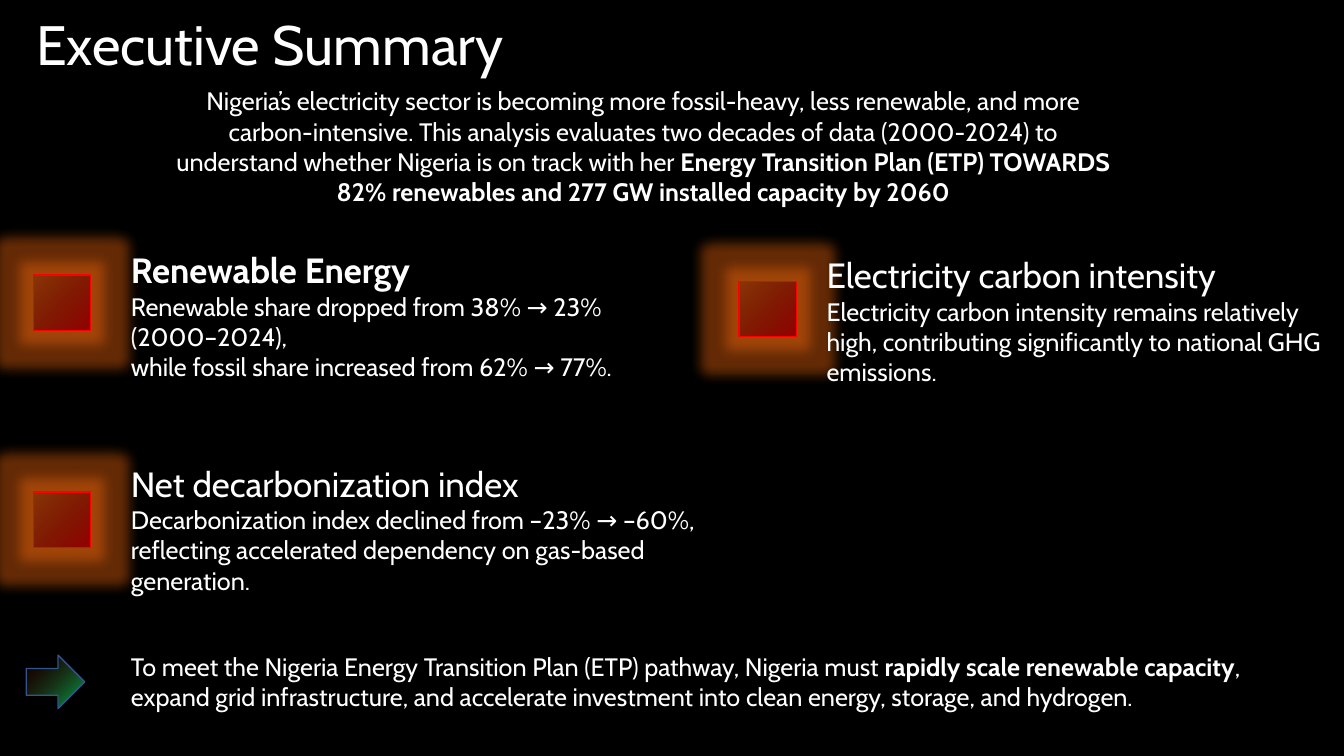
from dataclasses import dataclass

from lxml import etree
from pptx import Presentation
from pptx.dml.color import RGBColor
from pptx.enum.shapes import MSO_SHAPE
from pptx.enum.text import MSO_ANCHOR, PP_ALIGN
from pptx.oxml import parse_xml
from pptx.oxml.ns import nsdecls, qn
from pptx.slide import Slide
from pptx.util import Inches, Pt

COLORS = {
    "background": "000000",
    "text": "FFFFFF",
    "red": "FF0000",
    "dark_red": "970000",
    "fade": "470000",
    "green": "00B050",
    "arrow_line": "325491",
    "glow": "FF6D0F",
}
FONT = "Cabin"
HEADING_SIZE = 25
BODY_SIZE = 18

Box = tuple[float, float, float, float]
Run = tuple[str, bool]  # text, bold


@dataclass(frozen=True)
class Line:
    runs: list[Run]
    size: float = BODY_SIZE


@dataclass(frozen=True)
class Stop:
    position: int
    color: str
    opacity: int = 100


@dataclass(frozen=True)
class Finding:
    heading: str
    body: list[str]
    text_box: Box
    marker: tuple[float, float]
    bold_heading: bool = False


MARKER_STOPS = [Stop(0, "dark_red"), Stop(97, "fade", 23), Stop(100, "red")]
ARROW_STOPS = [Stop(0, "green"), Stop(96, "fade", 23)]

FINDINGS = [
    Finding(
        "Renewable Energy",
        [
            "Renewable share dropped from 38% → 23%",
            "(2000–2024),",
            "while fossil share increased from 62% → 77%.",
        ],
        (1.2, 2.42, 5.94, 1.73),
        (0.33, 2.73),
        bold_heading=True,
    ),
    Finding(
        "Electricity carbon intensity",
        ["Electricity carbon intensity remains relatively high, contributing "
         "significantly to national GHG emissions."],
        (8.1, 2.47, 5.17, 1.73),
        (7.33, 2.79),
    ),
    Finding(
        "Net decarbonization index",
        ["Decarbonization index declined from –23% → –60%, reflecting "
         "accelerated dependency on gas-based generation."],
        (1.2, 4.54, 6.14, 1.43),
        (0.33, 4.88),
    ),
]


def add_text(slide: Slide, lines: list[Line], box: Box, *,
             align: PP_ALIGN = PP_ALIGN.LEFT,
             anchor: MSO_ANCHOR = MSO_ANCHOR.TOP,
             line_spacing: float = 1.0) -> None:
    frame = slide.shapes.add_textbox(*map(Inches, box)).text_frame
    frame.word_wrap = True
    frame.vertical_anchor = anchor
    for index, line in enumerate(lines):
        paragraph = frame.add_paragraph() if index else frame.paragraphs[0]
        paragraph.alignment = align
        paragraph.line_spacing = line_spacing
        for text, bold in line.runs:
            run = paragraph.add_run()
            run.text = text
            run.font.name = FONT
            run.font.size = Pt(line.size)
            run.font.bold = bold
            run.font.color.rgb = RGBColor.from_string(COLORS["text"])


def gradient_xml(stops: list[Stop], angle: int) -> str:
    stop_xml = "".join(
        f'<a:gs pos="{stop.position * 1000}"><a:srgbClr val="{COLORS[stop.color]}">'
        f'<a:alpha val="{stop.opacity * 1000}"/></a:srgbClr></a:gs>'
        for stop in stops
    )
    return (f'<a:gradFill {nsdecls("a")} rotWithShape="1"><a:gsLst>{stop_xml}</a:gsLst>'
            f'<a:lin ang="{angle * 60000}" scaled="0"/></a:gradFill>')


def add_gradient_shape(slide: Slide, kind: MSO_SHAPE, box: Box,
                       stops: list[Stop], line_color: str,
                       glow_radius: float = 0) -> None:
    shape = slide.shapes.add_shape(kind, *map(Inches, box))
    shape.shadow.inherit = False
    shape.line.color.rgb = RGBColor.from_string(COLORS[line_color])
    shape.line.width = Pt(1)
    properties = shape._element.spPr
    properties.find(qn("a:prstGeom")).addnext(parse_xml(gradient_xml(stops, 225)))
    if glow_radius:
        effects = properties.find(qn("a:effectLst"))
        glow = etree.SubElement(effects, qn("a:glow"), rad=str(Inches(glow_radius)))
        color = etree.SubElement(glow, qn("a:srgbClr"), val=COLORS["glow"])
        etree.SubElement(color, qn("a:alpha"), val="40000")


def main() -> None:
    presentation = Presentation()
    presentation.slide_width = Inches(13.33)
    presentation.slide_height = Inches(7.5)
    slide = presentation.slides.add_slide(presentation.slide_layouts[6])
    background = slide.background.fill
    background.solid()
    background.fore_color.rgb = RGBColor.from_string(COLORS["background"])

    # Title and introduction
    add_text(slide, [Line([("Executive Summary", False)], 39.6)],
             (0.26, 0.23, 12.08, 0.49), anchor=MSO_ANCHOR.MIDDLE, line_spacing=0.9)
    introduction = Line([
        ("Nigeria’s electricity sector is becoming more fossil-heavy, less renewable, "
         "and more carbon-intensive. This analysis evaluates two decades of data "
         "(2000-2024) to understand whether Nigeria is on track with her ", False),
        ("Energy Transition Plan (ETP) TOWARDS 82% renewables and 277 GW installed "
         "capacity by 2060", True),
    ])
    add_text(slide, [introduction], (1.61, 0.8, 9.54, 0.78), align=PP_ALIGN.CENTER)

    # Findings with glowing markers
    for finding in FINDINGS:
        add_gradient_shape(slide, MSO_SHAPE.RECTANGLE, (*finding.marker, 0.57, 0.55),
                           MARKER_STOPS, "red", glow_radius=0.25)
        heading = Line([(finding.heading, finding.bold_heading)], HEADING_SIZE)
        body = [Line([(text, False)]) for text in finding.body]
        add_text(slide, [heading, *body], finding.text_box)

    # Recommendation
    add_gradient_shape(slide, MSO_SHAPE.RIGHT_ARROW, (0.26, 6.5, 0.58, 0.53),
                       ARROW_STOPS, "arrow_line")
    recommendation = Line([
        ("To meet the Nigeria Energy Transition Plan (ETP) pathway, Nigeria must ", False),
        ("rapidly scale renewable capacity", True),
        (", expand grid infrastructure, and accelerate investment into clean energy, "
         "storage, and hydrogen.", False),
    ])
    add_text(slide, [recommendation], (1.2, 6.41, 11.81, 0.71))

    presentation.save("out.pptx")


if __name__ == "__main__":
    main()
